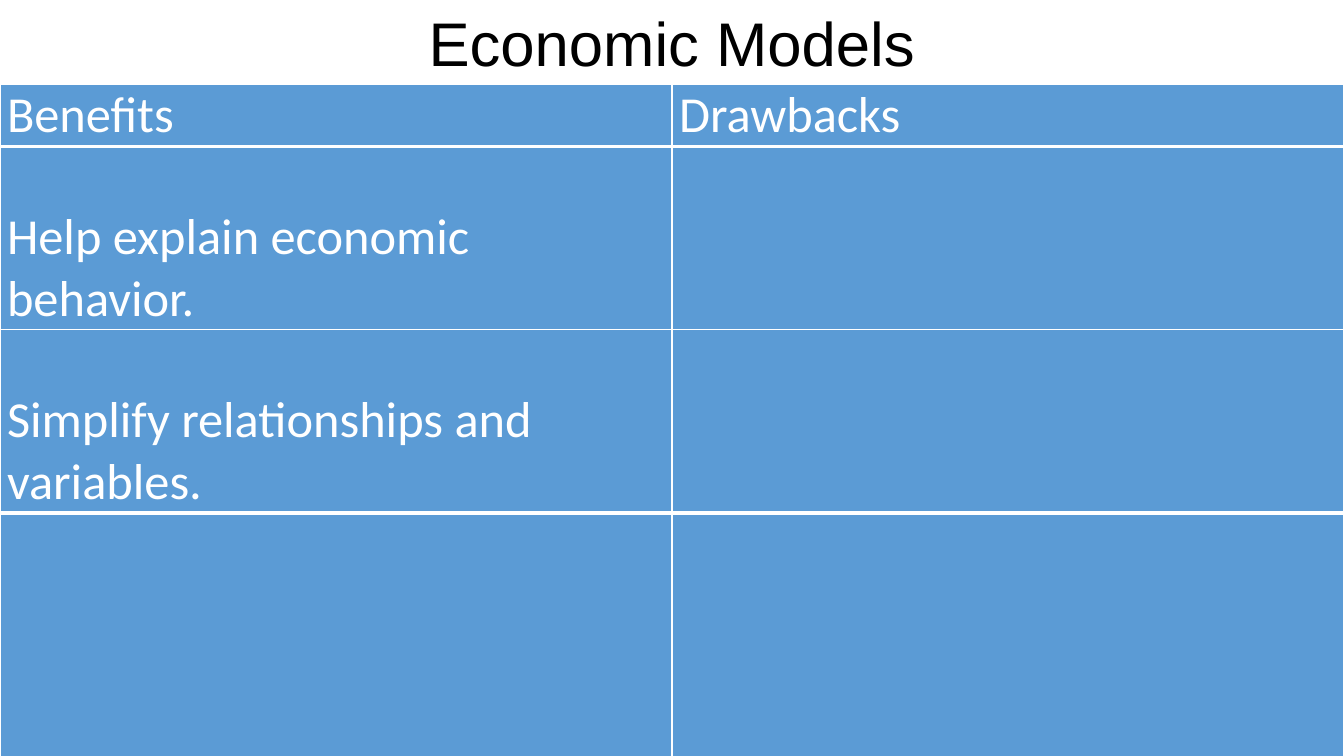
from dataclasses import dataclass

from lxml import etree
from pptx import Presentation
from pptx import util as u
from pptx.dml.color import RGBColor
from pptx.enum import text
from pptx.oxml import ns


@dataclass(frozen=True)
class Theme:
    title_font: str = "Arial"
    body_font: str = "Calibri"
    title_size: int = 44
    body_size: int = 36
    ink: str = "000000"
    paper: str = "FFFFFF"
    cell: str = "5B9BD5"
    thin: int = 1
    thick: int = 3


def write(frame, words, *, font, size, color, align=text.PP_ALIGN.LEFT):
    para = frame.paragraphs[0]
    para.alignment = align
    span = para.add_run()
    span.text = words
    span.font.name = font
    span.font.size = u.Pt(size)
    span.font.color.rgb = RGBColor.from_string(color)


class SlideBuilder:
    """Draws themed elements on the current page."""

    def __init__(self, page, theme):
        self.page = page
        self.theme = theme

    def title(self, words, left, top, width, height):
        box = self.page.shapes.add_textbox(*map(u.Inches, (left, top, width, height)))
        frame = box.text_frame
        frame.word_wrap = False
        frame.vertical_anchor = text.MSO_ANCHOR.MIDDLE
        write(frame, words, font=self.theme.title_font, size=self.theme.title_size,
              color=self.theme.ink, align=text.PP_ALIGN.CENTER)

    def borders(self, cell, widths):
        properties = cell._tc.get_or_add_tcPr()
        for index, (side, points) in enumerate(widths.items()):
            line = etree.Element(ns.qn(f"a:ln{side}"), w=str(u.Pt(points)))
            fill = etree.SubElement(line, ns.qn("a:solidFill"))
            etree.SubElement(fill, ns.qn("a:srgbClr"), val=self.theme.paper)
            properties.insert(index, line)

    def cell(self, cell, words, widths):
        cell.margin_left = cell.margin_right = u.Inches(0.07)
        cell.margin_top = cell.margin_bottom = 0
        cell.vertical_anchor = text.MSO_ANCHOR.BOTTOM
        cell.fill.solid()
        cell.fill.fore_color.rgb = RGBColor.from_string(self.theme.cell)
        self.borders(cell, widths)
        if words:
            write(cell.text_frame, words, font=self.theme.body_font,
                  size=self.theme.body_size, color=self.theme.paper)

    def table(self, rows, heights, thick_edges, left, top, width):
        columns = len(rows[0])
        place = map(u.Inches, (left, top, width, sum(heights)))
        table = self.page.shapes.add_table(len(rows), columns, *place).table
        for column in table.columns:
            column.width = u.Inches(width / columns)
        edges = [self.theme.thick if edge in thick_edges else self.theme.thin
                 for edge in range(len(rows) + 1)]
        for row, (words, height) in enumerate(zip(rows, heights)):
            table.rows[row].height = u.Inches(height)
            widths = {"L": self.theme.thin, "R": self.theme.thin,
                      "T": edges[row], "B": edges[row + 1]}
            for column, entry in enumerate(words):
                self.cell(table.cell(row, column), entry, widths)


def main():
    deck = Presentation()
    deck.slide_width, deck.slide_height = u.Inches(13.33), u.Inches(7.5)
    builder = SlideBuilder(deck.slides.add_slide(deck.slide_layouts[6]), Theme())
    rows = [
        ("Benefits", "Drawbacks"),
        ("Help explain economic behavior.", ""),
        ("Simplify relationships and variables.", ""),
        ("", ""),
    ]
    builder.table(rows, heights=(0.61, 1.82, 1.82, 2.41), thick_edges=(1, 3),
                  left=0, top=0.84, width=13.33)
    builder.title("Economic Models", 4.13, 0, 5.07, 0.84)
    deck.save("out.pptx")


if __name__ == "__main__":
    main()
